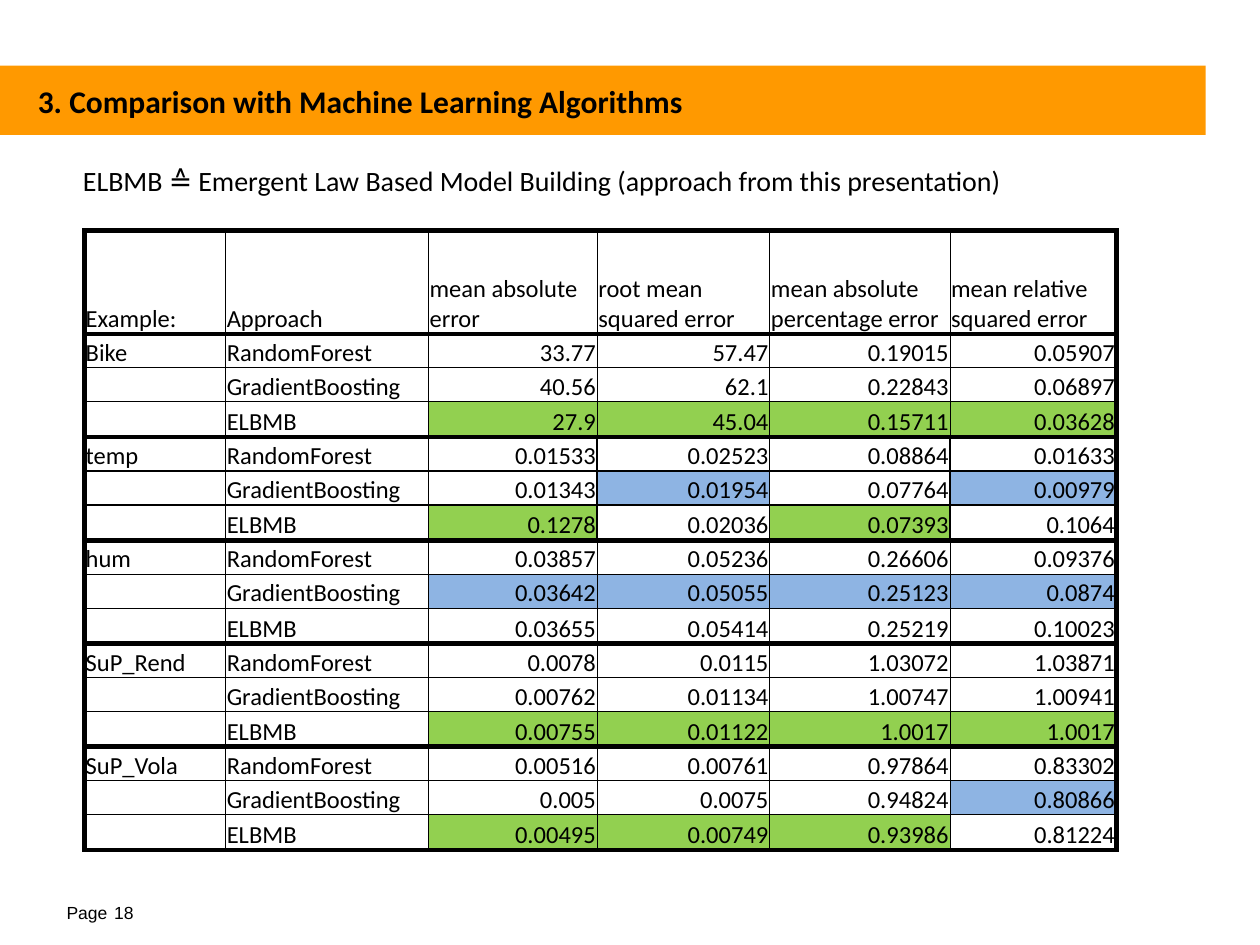
from lxml.etree import SubElement
from pptx import Presentation
from pptx.dml.color import RGBColor
from pptx.enum.shapes import MSO_SHAPE
from pptx.enum.text import MSO_ANCHOR, PP_ALIGN
from pptx.oxml import parse_xml
from pptx.oxml.ns import nsdecls, qn
from pptx.util import Inches, Pt

COLORS = {"text": "000000", "bar": "FF9900", "G": "92D050", "B": "8EB4E3"}
TITLE = "3. Comparison with Machine Learning Algorithms"
LEGEND = "ELBMB ≙ Emergent Law Based Model Building (approach from this presentation)"
PAGE = [("Page", 10), (" ", 14), ("18", 10)]
HEADER = ["Example:", "Approach", "mean absolute error", "root mean squared error",
          "mean absolute percentage error", "mean relative squared error"]
APPROACHES = ["RandomForest", "GradientBoosting", "ELBMB"]
# END_HEADER
RESULTS = [
    ("Bike", 0.5, [("33.77 57.47 0.19015 0.05907", "----"),
                   ("40.56 62.1 0.22843 0.06897", "----"),
                   ("27.9 45.04 0.15711 0.03628", "GGGG")]),
    ("temp", 1, [("0.01533 0.02523 0.08864 0.01633", "----"),
                 ("0.01343 0.01954 0.07764 0.00979", "-B-B"),
                 ("0.1278 0.02036 0.07393 0.1064", "G-G-")]),
    ("hum", 0.5, [("0.03857 0.05236 0.26606 0.09376", "----"),
                  ("0.03642 0.05055 0.25123 0.0874", "BBBB"),
                  ("0.03655 0.05414 0.25219 0.10023", "----")]),
    ("SuP_Rend", 0.5, [("0.0078 0.0115 1.03072 1.03871", "----"),
                       ("0.00762 0.01134 1.00747 1.00941", "----"),
                       ("0.00755 0.01122 1.0017 1.0017", "GGGG")]),
    ("SuP_Vola", 0.5, [("0.00516 0.00761 0.97864 0.83302", "----"),
                       ("0.005 0.0075 0.94824 0.80866", "---B"),
                       ("0.00495 0.00749 0.93986 0.81224", "GGG-")]),
]
COL_WIDTHS = [1.12, 1.61, 1.34, 1.37, 1.43, 1.32]
GROUP_HEIGHTS = [0.27, 0.27, 0.28]
HEADER_HEIGHT = sum(GROUP_HEIGHTS)
THICK = 3


def rgb(name):
    return RGBColor.from_string(COLORS[name])


def add_run(p, text, size, font="Calibri", bold=False):
    r = p.add_run()
    r.text = text
    r.font.size, r.font.name, r.font.bold = Pt(size), font, bold
    r.font.color.rgb = rgb("text")


def add_text_box(s, box, runs, font, anchor=MSO_ANCHOR.TOP):
    tf = s.shapes.add_textbox(*map(Inches, box)).text_frame
    tf.word_wrap, tf.vertical_anchor = True, anchor
    for text, size in runs:
        add_run(tf.paragraphs[0], text, size, font)


def set_borders(cell, widths):
    tcPr = cell._tc.get_or_add_tcPr()
    for i, (side, width) in enumerate(zip("LRTB", widths)):
        tcPr.insert(i, parse_xml(
            f'<a:ln{side} {nsdecls("a")} w="{Pt(width)}"><a:solidFill>'
            f'<a:srgbClr val="{COLORS["text"]}"/></a:solidFill></a:ln{side}>'))


def fill_cell(cell, text, mark, align, borders):
    cell.margin_left = cell.margin_right = cell.margin_top = Inches(0.01)
    cell.margin_bottom = 0
    cell.vertical_anchor = MSO_ANCHOR.BOTTOM
    if mark in COLORS:
        cell.fill.solid()
        cell.fill.fore_color.rgb = rgb(mark)
    else:
        cell.fill.background()
    set_borders(cell, borders)
    p = cell.text_frame.paragraphs[0]
    p.alignment = align
    if text:
        add_run(p, text, 14)
    else:
        SubElement(p._p, qn("a:endParaRPr"), sz="1400")


def table_rows():
    yield HEADER, "-" * 6, 0.5, THICK, THICK
    for name, thin, lines in RESULTS:
        for i, (approach, (values, marks)) in enumerate(zip(APPROACHES, lines)):
            first, last = i == 0, i == len(lines) - 1
            yield ([name if first else "", approach, *values.split()], "--" + marks, thin,
                   THICK if first else thin, THICK if last else thin)


def add_results_table(s):
    rows = list(table_rows())
    heights = [HEADER_HEIGHT] + GROUP_HEIGHTS * len(RESULTS)
    box = (0.67, 1.83, sum(COL_WIDTHS), sum(heights))
    table = s.shapes.add_table(len(rows), len(HEADER), *map(Inches, box)).table
    table.first_row = table.horz_banding = False
    for col, width in zip(table.columns, COL_WIDTHS):
        col.width = Inches(width)
    for row, height in zip(table.rows, heights):
        row.height = Inches(height)
    for r, (texts, marks, thin, top, bottom) in enumerate(rows):
        for c, (text, mark) in enumerate(zip(texts, marks)):
            left = THICK if c == 0 else thin
            right = THICK if c == len(HEADER) - 1 else thin
            align = PP_ALIGN.RIGHT if r and c > 1 else PP_ALIGN.LEFT
            fill_cell(table.cell(r, c), text, mark, align, (left, right, top, bottom))


def add_title(s):
    bar = s.shapes.add_shape(MSO_SHAPE.RECTANGLE, 0, Inches(0.52), Inches(9.57), Inches(0.55))
    bar.shadow.inherit = False
    bar.fill.solid()
    bar.fill.fore_color.rgb = rgb("bar")
    bar.line.fill.background()
    title = s.shapes.title
    title._element.addprevious(bar._element)
    title.left, title.top, title.width, title.height = map(Inches, (0.2, 0.6, 5.36, 0.4))
    tf = title.text_frame
    tf.word_wrap, tf.vertical_anchor = False, MSO_ANCHOR.TOP
    p = tf.paragraphs[0]
    p.alignment = PP_ALIGN.LEFT
    p.space_before = p.space_after = Pt(6)
    add_run(p, TITLE, 18, bold=True)


def main():
    prs = Presentation()
    prs.slide_width, prs.slide_height = Inches(10), Inches(7.5)
    s = prs.slides.add_slide(prs.slide_layouts[5])
    add_title(s)
    add_text_box(s, (0.43, 7.02, 2.33, 0.4), PAGE, "Arial", MSO_ANCHOR.MIDDLE)
    add_results_table(s)
    add_text_box(s, (0.56, 1.25, 9.29, 0.64), [(LEGEND, 16)], "Calibri")
    prs.save("out.pptx")


if __name__ == "__main__":
    main()
